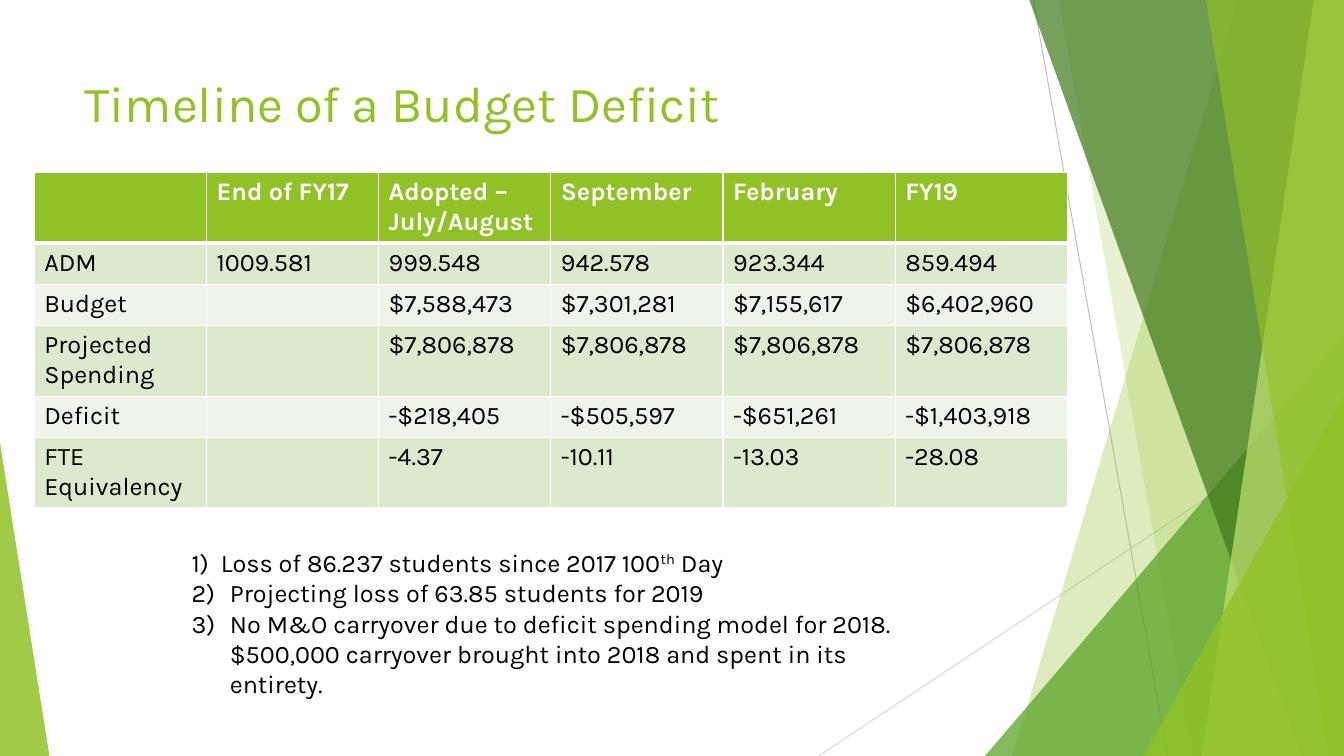
from pptx import Presentation, util as u
from pptx.dml import color
from pptx.enum import shapes, text
from pptx.oxml import ns, xmlchemy

WIDTH, HEIGHT = 13.33, 7.5
GREEN, WHITE, BLACK = "90C226", "FFFFFF", "000000"
BAND_FILLS = ("EEF4E8", "DBE9CD")

TITLE_BOX = (5.55, 8.93, 70.52, 19.2)
TABLE_BOX = (2.55, 22.8, 76.89, 32.8)
NOTES_BOX = (13.5, 71.73, 54.69, 21.6)
FACET_BOX = (0, 0, 100, 100)

BUDGET_ROWS = [
    ["", "End of FY17", "Adopted – July/August", "September", "February", "FY19"],
    ["ADM", "1009.581", "999.548", "942.578", "923.344", "859.494"],
    ["Budget", "", "$7,588,473", "$7,301,281", "$7,155,617", "$6,402,960"],
    ["Projected Spending", ""] + ["$7,806,878"] * 4,
    ["Deficit", "", "-$218,405", "-$505,597", "-$651,261", "-$1,403,918"],
    ["FTE Equivalency", "", "-4.37", "-10.11", "-13.03", "-28.08"],
]
NOTES = [
    [("1)\tLoss of 86.237 students since 2017 100", 0), ("th", 30), (" Day", 0)],
    [("Projecting loss of 63.85 students for 2019", 0)],
    [("No M&O carryover due to deficit spending model for 2018. "
      "$500,000 carryover brought into 2018 and spent in its entirety.", 0)],
]
FACET_LINES = [
    ((76.89, 0), (86.87, 100), "BFBFBF"),
    ((100, 53.73), (60.92, 100), "D9D9D9"),
]
FACETS = [
    ("band", (92.12, 75.32), GREEN, 30),
    ("band", (78.77, 88.75), GREEN, 20),
    ("triangle", (73.29, 44.4, 26.71, 1), "54A021", 72),
    ("band", (76.59, 96.85), "3F7819", 70),
    ("band", (97.75, 89.42), "C0E474", 70),
    ("band", (89.72, 98.87), GREEN, 65),
    ("triangle", (85.07, 52.4, 14.93, 1), GREEN, 80),
    ("triangle", (0, 58.53, 3.68, 0), GREEN, 85),
]


def rgb(value):
    """Turn a hex string into a colour."""
    return color.RGBColor.from_string(value)


def place(box, x, y):
    """Return the point at x and y percent of a box given in slide percent."""
    left, top, width, height = box
    return (u.Inches(WIDTH * (left + width * x / 100) / 100),
            u.Inches(HEIGHT * (top + height * y / 100) / 100))


def frame(box):
    """Return left, top, width and height of a box as lengths."""
    left, top = place(box, 0, 0)
    right, bottom = place(box, 100, 100)
    return left, top, right - left, bottom - top


def apply_format(target, values):
    """Set each attribute named in a dict of values."""
    for name, value in values.items():
        setattr(target, name, value)


def format_font(font, size, hex_color, bold=False):
    """Give a font the slide's typeface, a size and a colour."""
    apply_format(font, {"name": "Karla", "size": u.Pt(size), "bold": bold})
    font.color.rgb = rgb(hex_color)


def add_child(parent, tag, **attributes):
    """Append a drawing element with the given attributes."""
    child = xmlchemy.OxmlElement(tag)
    for name, value in attributes.items():
        child.set(name, str(value))
    parent.append(child)
    return child


def draw_facets(slide, box):
    """Draw the two thin lines and the translucent green facets."""
    for start, end, hex_color in FACET_LINES:
        line = slide.shapes.add_connector(
            shapes.MSO_CONNECTOR.STRAIGHT, *place(box, *start), *place(box, *end))
        line.line.color.rgb = rgb(hex_color)
        line.line.width = u.Pt(0.75)
        add_child(line.element.spPr, "a:effectLst")
    for kind, geometry, hex_color, opacity in FACETS:
        if kind == "band":
            top, bottom = geometry
            builder = slide.shapes.build_freeform(*place(box, top, 0), scale=1.0)
            corners = [(100, 0), (100, 100), (bottom, 100)]
            builder.add_line_segments([place(box, *corner) for corner in corners])
            facet = builder.convert_to_shape()
        else:
            x, y, width, apex = geometry
            left, top = place(box, x, y)
            right, bottom = place(box, x + width, 100)
            facet = slide.shapes.add_shape(
                shapes.MSO_SHAPE.ISOSCELES_TRIANGLE,
                left, top, right - left, bottom - top)
            facet.adjustments[0] = apex
        facet.shadow.inherit = False
        facet.line.fill.background()
        facet.fill.solid()
        facet.fill.fore_color.rgb = rgb(hex_color)
        fill = facet.element.spPr.find(ns.qn("a:solidFill"))
        add_child(fill[0], "a:alpha", val=opacity * 1000)


def write_title(title, box):
    """Place and format the slide title."""
    apply_format(title, dict(zip(("left", "top", "width", "height"), frame(box))))
    title.text = "Timeline of a Budget Deficit"
    title.text_frame.vertical_anchor = text.MSO_ANCHOR.TOP
    paragraph = title.text_frame.paragraphs[0]
    paragraph.alignment = text.PP_ALIGN.LEFT
    format_font(paragraph.runs[0].font, 36, GREEN)


def border_cell(cell, row):
    """Draw white cell borders, heavier under the header."""
    properties = cell._tc.get_or_add_tcPr()
    widths = {"L": 1, "R": 1, "T": 3 if row == 1 else 1, "B": 3 if row == 0 else 1}
    for side, width in widths.items():
        line = add_child(properties, f"a:ln{side}", w=u.Pt(width))
        add_child(add_child(line, "a:solidFill"), "a:srgbClr", val=WHITE)


def draw_table(slide, box):
    """Build the budget table with a green header and banded rows."""
    table = slide.shapes.add_table(
        len(BUDGET_ROWS), len(BUDGET_ROWS[0]), *frame(box)).table
    for row, values in enumerate(BUDGET_ROWS):
        header = row == 0
        for column, value in enumerate(values):
            cell = table.cell(row, column)
            border_cell(cell, row)
            cell.fill.solid()
            cell.fill.fore_color.rgb = rgb(GREEN if header else BAND_FILLS[row % 2])
            cell.text = value
            format_font(cell.text_frame.paragraphs[0].font, 18,
                        WHITE if header else BLACK, header)
            for run in cell.text_frame.paragraphs[0].runs:
                format_font(run.font, 18, WHITE if header else BLACK, header)


def write_notes(body, box):
    """Fill the body with the numbered notes."""
    apply_format(body, dict(zip(("left", "top", "width", "height"), frame(box))))
    apply_format(body.text_frame, {
        "word_wrap": True, "vertical_anchor": text.MSO_ANCHOR.TOP,
        "auto_size": text.MSO_AUTO_SIZE.SHAPE_TO_FIT_TEXT})
    for index, runs in enumerate(NOTES):
        frame_text = body.text_frame
        paragraph = frame_text.add_paragraph() if index else frame_text.paragraphs[0]
        apply_format(paragraph, {"space_before": u.Pt(0), "space_after": u.Pt(0)})
        properties = paragraph._p.get_or_add_pPr()
        indent = u.Inches(0.38 if index else 0.29)
        properties.set("marL", str(indent))
        properties.set("indent", str(-indent))
        if index:
            add_child(properties, "a:buFont", typeface="+mj-lt")
            add_child(properties, "a:buAutoNum", type="arabicParenR", startAt=2)
        else:
            add_child(properties, "a:buNone")
        for value, raised in runs:
            run = paragraph.add_run()
            run.text = value
            format_font(run.font, 18, BLACK)
            if raised:
                run._r.get_or_add_rPr().set("baseline", str(raised * 1000))


def build_slide(presentation):
    """Assemble the budget timeline slide."""
    slide = presentation.slides.add_slide(presentation.slide_layouts[1])
    draw_facets(slide, FACET_BOX)
    write_title(slide.shapes.title, TITLE_BOX)
    draw_table(slide, TABLE_BOX)
    write_notes(slide.placeholders[1], NOTES_BOX)


def main():
    """Create the presentation and save it."""
    presentation = Presentation()
    apply_format(presentation, {"slide_width": u.Inches(WIDTH),
                                "slide_height": u.Inches(HEIGHT)})
    build_slide(presentation)
    presentation.save("out.pptx")


if __name__ == "__main__":
    main()
